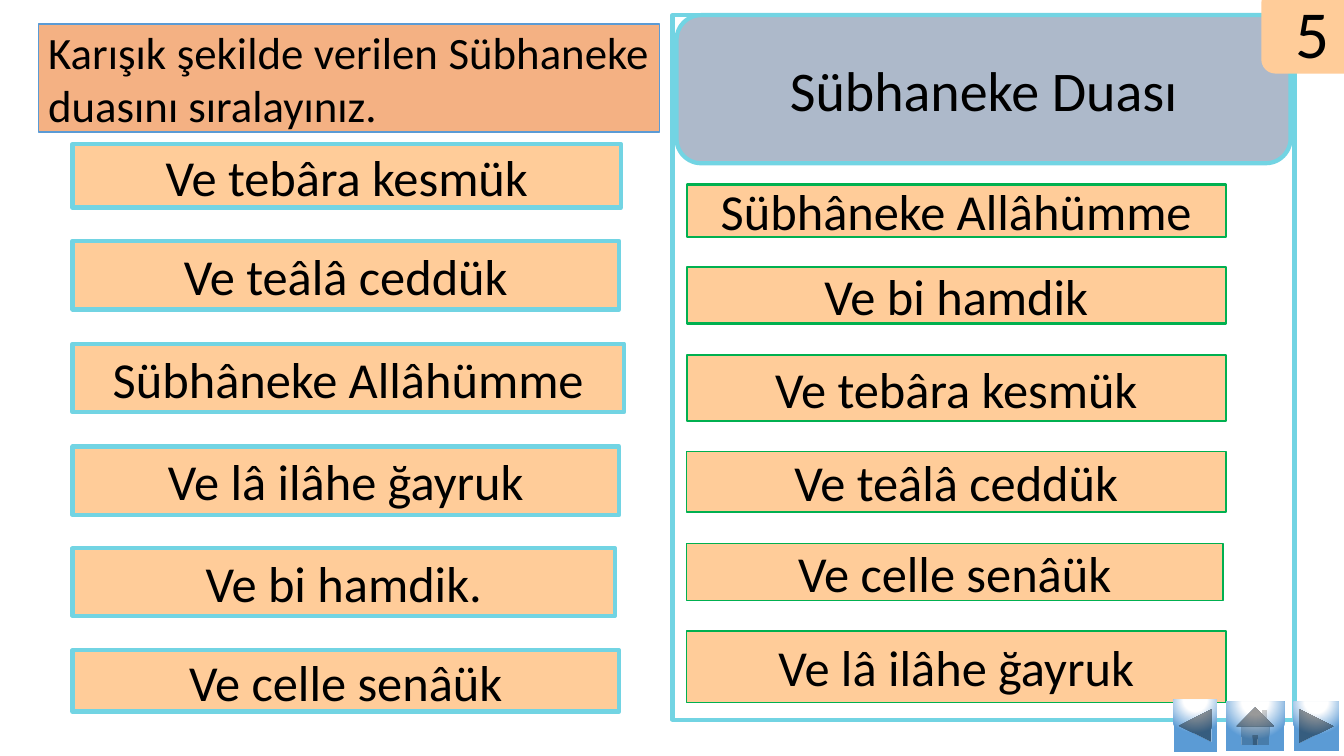
"""Builds the prayer ordering exercise slide."""
from collections import namedtuple

from lxml import etree
from pptx import Presentation
from pptx.dml.color import RGBColor
from pptx.enum.shapes import MSO_SHAPE
from pptx.enum.text import MSO_ANCHOR, PP_ALIGN
from pptx.oxml.ns import qn
from pptx.util import Inches, Pt

RECT, ROUNDED = MSO_SHAPE.RECTANGLE, MSO_SHAPE.ROUNDED_RECTANGLE
BACK = MSO_SHAPE.ACTION_BUTTON_BACK_OR_PREVIOUS
NEXT = MSO_SHAPE.ACTION_BUTTON_FORWARD_OR_NEXT
HOME = MSO_SHAPE.ACTION_BUTTON_HOME
CENTER, JUSTIFY = PP_ALIGN.CENTER, PP_ALIGN.JUSTIFY
MIDDLE = MSO_ANCHOR.MIDDLE

BLACK = RGBColor(0x00, 0x00, 0x00)
WHITE = RGBColor(0xFF, 0xFF, 0xFF)
PEACH = RGBColor(0xFF, 0xCC, 0x99)
ORANGE = RGBColor(0xF4, 0xB1, 0x83)
SLATE = RGBColor(0xAD, 0xB9, 0xCA)
AQUA = RGBColor(0x72, 0xD4, 0xE3)
BLUE = RGBColor(0x5B, 0x9B, 0xD5)
GREEN = RGBColor(0x00, 0xB0, 0x50)

COLUMNS, ROWS = 1333, 750
CELL = Inches(0.01)
Box = namedtuple("Box", "left top width height")

MIXED_LINES = [
    ("Ve tebâra kesmük", 0, 544, 63),
    ("Ve teâlâ ceddük", 96, 542, 68),
    ("Sübhâneke Allâhümme", 198, 547, 68),
    ("Ve lâ ilâhe ğayruk", 300, 542, 68),
    ("Ve bi hamdik.", 401, 538, 67),
    ("Ve celle senâük", 502, 542, 61),
]
ORDERED_LINES = [
    ("Sübhâneke Allâhümme", 0, 535, 52, 1.5),
    ("Ve bi hamdik", 82, 535, 56, 1.5),
    ("Ve tebâra kesmük", 169, 535, 66, 1.5),
    ("Ve teâlâ ceddük", 265, 535, 60, 1),
    ("Ve celle senâük", 356, 532, 57, 1),
    ("Ve lâ ilâhe ğayruk", 443, 535, 71, 1),
]


def add_block(page, box, kind=RECT, fill=PEACH, line=None, weight=3):
    """Add a flat shape over the grid cells of the box."""
    block = page.shapes.add_shape(kind, *(cells * CELL for cells in box))
    block.shadow.inherit = False
    block.fill.solid()
    block.fill.fore_color.rgb = fill
    if line is None:
        block.line.fill.background()
    else:
        block.line.color.rgb = line
        block.line.width = Pt(weight)
    return block


def write(block, text, size=36, align=CENTER):
    """Set the text of a block and format it."""
    frame = block.text_frame
    frame.text = text
    frame.word_wrap = True
    frame.vertical_anchor = MIDDLE
    para = frame.paragraphs[0]
    para.alignment = align
    font = para.runs[0].font
    font.name, font.size = "Calibri", Pt(size)
    font.color.rgb = BLACK


def glow(block):
    """Give a block a round gradient from white to blue."""
    block.fill.gradient()
    gradient = block.element.spPr.find(qn("a:gradFill"))
    for child in list(gradient):
        gradient.remove(child)
    stops = etree.SubElement(gradient, qn("a:gsLst"))
    for position, color in ((0, WHITE), (35, WHITE), (100, BLUE)):
        stop = etree.SubElement(stops, qn("a:gs"), pos=str(position * 1000))
        etree.SubElement(stop, qn("a:srgbClr"), val=str(color))
    circle = etree.SubElement(gradient, qn("a:path"), path="circle")
    etree.SubElement(circle, qn("a:fillToRect"),
                     l="50000", t="-80000", r="50000", b="180000")


def build_exercise(page, box):
    """Place the instruction and the mixed lines in the left region."""
    instruction = add_block(page, box._replace(height=107), RECT, ORANGE, BLUE, 1)
    write(instruction, "Karışık şekilde verilen Sübhaneke duasını sıralayınız.", 32, JUSTIFY)
    for text, offset, width, height in MIXED_LINES:
        place = Box(box.left + 34, box.top + 119 + offset, width, height)
        write(add_block(page, place, line=AQUA), text)


def build_answer(page, box):
    """Place the frame, the title and the ordered lines in the right region."""
    add_block(page, box, fill=WHITE, line=AQUA)
    heading = Box(box.left + 4, box.top, box.width - 8, 147)
    write(add_block(page, heading, ROUNDED, SLATE, AQUA), "Sübhaneke Duası", 40)
    for text, offset, width, height, weight in ORDERED_LINES:
        place = Box(box.left + 14, box.top + 168 + offset, width, height)
        write(add_block(page, place, line=GREEN, weight=weight), text)


def build_navigation(page, box):
    """Place the back, home and next buttons along the box."""
    for kind, offset, drop, width in ((BACK, 0, 0, 43), (HOME, 52, 2, 58), (NEXT, 119, 2, 45)):
        place = Box(box.left + offset, box.top + drop, width, box.height - 1.5 * drop)
        glow(add_block(page, Box(*map(int, place)), kind))


def main():
    """Build the deck and save it."""
    deck = Presentation()
    deck.slide_width, deck.slide_height = COLUMNS * CELL, ROWS * CELL
    page = deck.slides.add_slide(deck.slide_layouts[6])
    build_exercise(page, Box(38, 24, 616, 682))
    build_answer(page, Box(667, 15, 617, 699))
    write(add_block(page, Box(1251, -11, 101, 84), ROUNDED), "5", 48)
    build_navigation(page, Box(1164, 694, 164, 52))
    deck.save("out.pptx")


if __name__ == "__main__":
    main()
